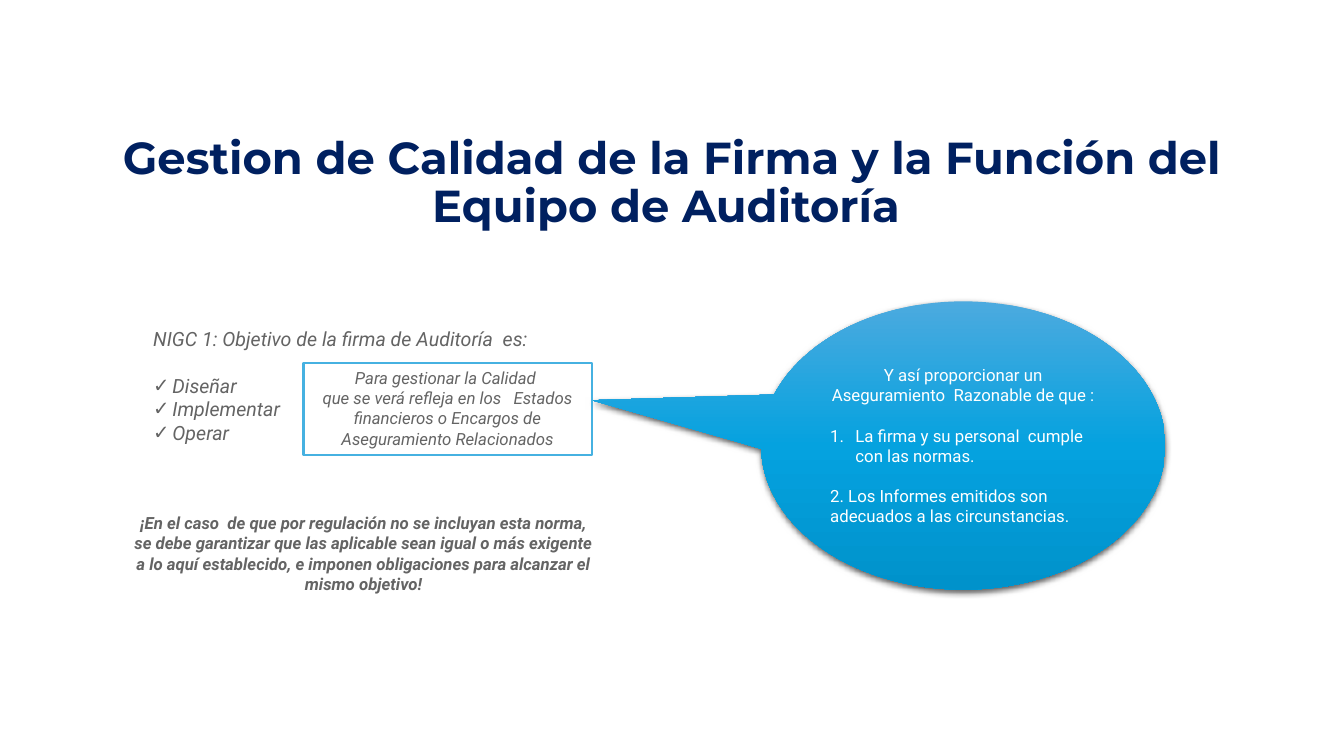
from lxml import etree
from pptx import Presentation
from pptx.dml.color import RGBColor
from pptx.enum.shapes import MSO_SHAPE
from pptx.enum.text import MSO_ANCHOR, MSO_AUTO_SIZE, PP_ALIGN
from pptx.oxml import parse_xml
from pptx.oxml.ns import qn
from pptx.util import Inches, Pt

LEFT, MID = PP_ALIGN.LEFT, PP_ALIGN.CENTER
TOP, HALF = MSO_ANCHOR.TOP, MSO_ANCHOR.MIDDLE
FIXED = MSO_AUTO_SIZE.NONE
RECT, BUBBLE = MSO_SHAPE.RECTANGLE, MSO_SHAPE.OVAL_CALLOUT
NAVY = RGBColor(0x00, 0x20, 0x60)
GRAY = RGBColor(0x64, 0x64, 0x64)
WHITE = RGBColor(0xFF, 0xFF, 0xFF)
SKY = RGBColor(0x46, 0xB1, 0xE1)
LIGHT = RGBColor(0x4C, 0xAA, 0xDF)
BLUE = RGBColor(0x05, 0xA2, 0xDF)
DEEP = RGBColor(0x00, 0x92, 0xCB)
SPACE = "http://schemas.openxmlformats.org/drawingml/2006/main"


class Deck:
    """Builds one slide in a set style, with lengths in percent of its size."""

    head, body = "Montserrat", "Roboto"

    def __init__(self):
        self.prs = Presentation()
        self.prs.slide_width, self.prs.slide_height = Inches(13.33), Inches(7.5)
        self.slide = self.prs.slides.add_slide(self.prs.slide_layouts[1])

    def spot(self, left, top, width, height):
        across, down = self.prs.slide_width / 100, self.prs.slide_height / 100
        return [int(n * u) for n, u in zip((left, top, width, height), (across, down) * 2)]

    def place(self, shape, area):
        shape.left, shape.top, shape.width, shape.height = self.spot(*area)
        return shape

    def mark(self, para, tag=None, value=None, indent=0):
        props = para._p.get_or_add_pPr()
        props.set("marL", str(Inches(indent)))
        props.set("indent", str(-Inches(indent)))
        bullet = etree.SubElement(props, qn(tag or "a:buNone"))
        if tag:
            bullet.set("char" if tag == "a:buChar" else "type", value)

    def fill_text(self, shape, items, size, color, align=LEFT, anchor=TOP,
                  face=None, bold=False, italic=False, lead=1.0):
        frame = shape.text_frame
        frame.word_wrap, frame.auto_size = True, FIXED
        frame.vertical_anchor = anchor
        for i, item in enumerate(items):
            text, look = item if isinstance(item, tuple) else (item, {})
            para = frame.paragraphs[0] if i == 0 else frame.add_paragraph()
            para.text = text
            self.mark(para, *look.get("mark", ()))
            para.alignment = look.get("align", align)
            para.line_spacing = lead
            para.space_before = Pt(look.get("gap", 0))
            font = para.font
            font.name, font.size, font.color.rgb = face or self.body, Pt(size), color
            font.bold, font.italic = bold, italic

    def title(self, text, area):
        self.fill_text(self.place(self.slide.shapes.title, area), [text], 32, NAVY, MID, HALF,
                       face=self.head, bold=True, lead=0.9)

    def points(self, items, area):
        self.fill_text(self.place(self.slide.placeholders[1], area), items, 14, GRAY,
                       italic=True)

    def shape(self, kind, area):
        shape = self.slide.shapes.add_shape(kind, *self.spot(*area))
        shape.shadow.inherit = False
        return shape

    def frame(self, items, area):
        box = self.shape(RECT, area)
        box.fill.background()
        box.line.color.rgb, box.line.width = SKY, Pt(1.5)
        self.fill_text(box, items, 12, GRAY, MID, italic=True)

    def bubble(self, items, area, tip):
        shape = self.shape(BUBBLE, area)
        shape.adjustments[0], shape.adjustments[1] = tip
        shape.line.fill.background()
        stops = "".join(f'<a:gs pos="{i * 50000}"><a:srgbClr val="{c}"/></a:gs>'
                        for i, c in enumerate((LIGHT, BLUE, DEEP)))
        props = shape._element.spPr
        props.find(qn("a:ln")).addprevious(parse_xml(
            f'<a:gradFill xmlns:a="{SPACE}"><a:gsLst>{stops}</a:gsLst>'
            '<a:lin ang="5400000" scaled="0"/></a:gradFill>'))
        props.find(qn("a:effectLst")).append(parse_xml(
            f'<a:outerShdw xmlns:a="{SPACE}" blurRad="{Pt(4.5)}" dist="{Pt(1.5)}" '
            'dir="5400000" rotWithShape="0"><a:srgbClr val="000000">'
            '<a:alpha val="63000"/></a:srgbClr></a:outerShdw>'))
        self.fill_text(shape, items, 12, WHITE, anchor=HALF)

    def note(self, text, area):
        box = self.slide.shapes.add_textbox(*self.spot(*area))
        self.fill_text(box, [text], 12, GRAY, MID, bold=True, italic=True)


def main():
    deck = Deck()
    deck.title("Gestion de Calidad de la Firma y la Función del Equipo de Auditoría ",
               (3.98, 14.67, 92.1, 19.33))
    check = ("a:buChar", "✓", 0.19)
    deck.points(["NIGC 1: Objetivo de la firma de Auditoría  es:",
                 ("Diseñar", {"mark": check, "gap": 16.8}),
                 ("Implementar", {"mark": check}),
                 ("Operar", {"mark": check})],
                (10.65, 42.53, 31.43, 20.13))
    deck.bubble([("Y así proporcionar un Aseguramiento  Razonable de que :", {"align": MID}),
                 ("La firma y su personal  cumple con las normas.",
                  {"mark": ("a:buAutoNum", "arabicPeriod", 0.25), "gap": 14.3}),
                 ("2. Los Informes emitidos son adecuados a las circunstancias.",
                  {"gap": 14.3})],
                (56.63, 39.87, 30.08, 38.13), (-0.919, -0.157))
    deck.frame(["Para gestionar la Calidad ",
                "que se verá refleja en los   Estados financieros o Encargos de "
                "Aseguramiento Relacionados"],
               (22.58, 48, 21.45, 12.13))
    deck.note("¡En el caso  de que por regulación no se incluyan esta norma, se debe "
              "garantizar que las aplicable sean igual o más exigente a lo aquí "
              "establecido, e imponen obligaciones para alcanzar el mismo objetivo!",
              (8.93, 67.2, 36.23, 12.13))
    deck.prs.save("out.pptx")


if __name__ == "__main__":
    main()
